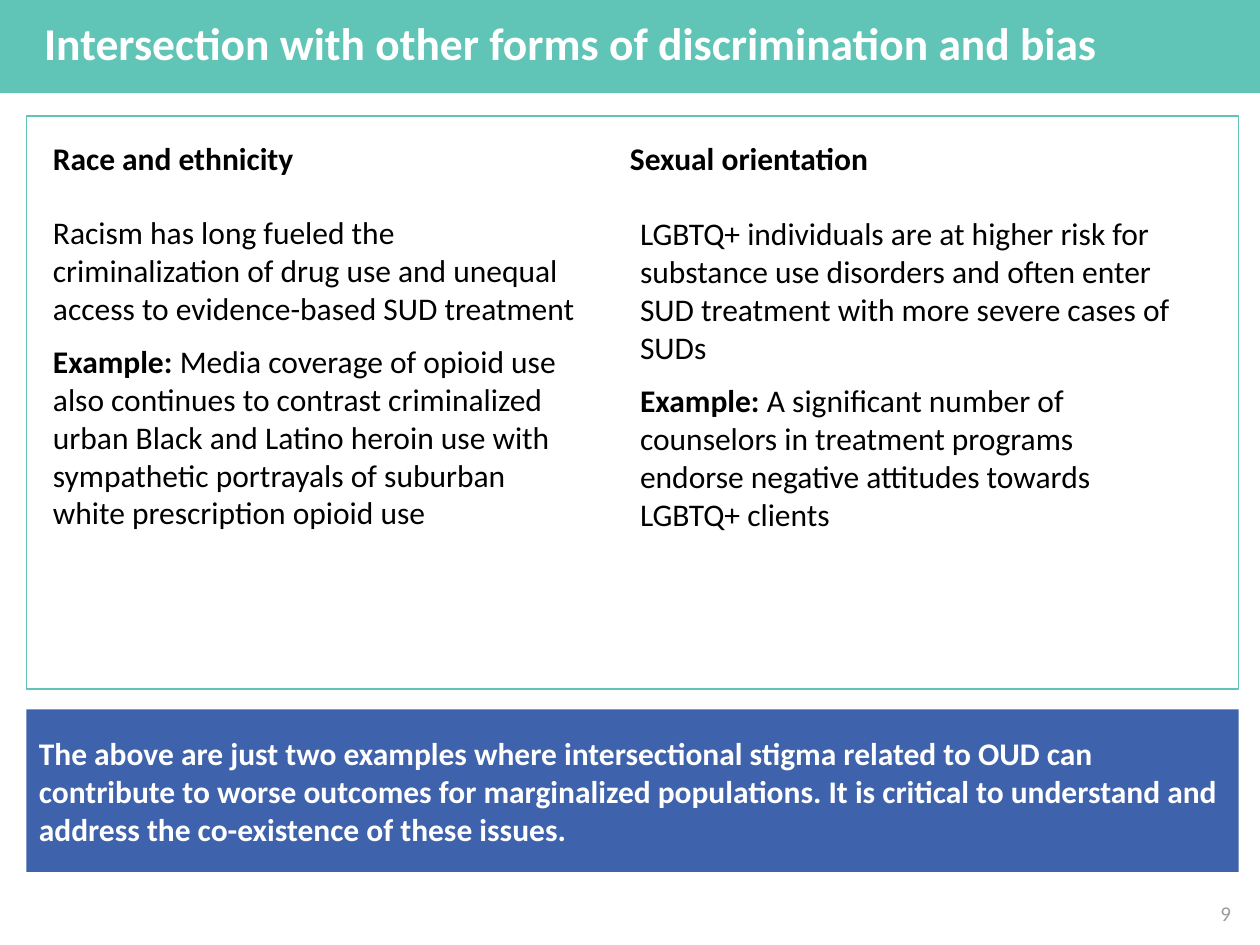
from dataclasses import dataclass

from pptx import Presentation
from pptx.dml.color import RGBColor
from pptx.enum.shapes import MSO_SHAPE
from pptx.enum.text import MSO_ANCHOR, MSO_AUTO_SIZE, PP_ALIGN
from pptx.util import Inches, Pt

RECT = MSO_SHAPE.RECTANGLE
MIDDLE = MSO_ANCHOR.MIDDLE
NO_AUTOFIT = MSO_AUTO_SIZE.NONE
LEFT, RIGHT = PP_ALIGN.LEFT, PP_ALIGN.RIGHT

TEAL = RGBColor(0x60, 0xC5, 0xB7)
BLUE = RGBColor(0x3E, 0x62, 0xAC)
WHITE = RGBColor(0xFF, 0xFF, 0xFF)
BLACK = RGBColor(0, 0, 0)
GRAY = RGBColor(0x9C, 0x9C, 0x9D)
FONT = "Calibri"


@dataclass
class Topic:
    heading: str
    heading_left: float
    body_left: float
    body_top: float
    statement: str
    example: str


TOPICS = [
    Topic("Race and ethnicity", 0.42, 0.42, 1.69,
          "Racism has long fueled the criminalization of drug use and unequal "
          "access to evidence-based SUD treatment",
          "Media coverage of opioid use also continues to contrast criminalized "
          "urban Black and Latino heroin use with sympathetic portrayals of "
          "suburban white prescription opioid use"),
    Topic("Sexual orientation", 5, 5.08, 1.7,
          "LGBTQ+ individuals are at higher risk for substance use disorders and "
          "often enter SUD treatment with more severe cases of SUDs",
          "A significant number of counselors in treatment programs endorse "
          "negative attitudes towards LGBTQ+ clients"),
]


def add_run(p, text: str, color: RGBColor = BLACK, size: float = 18,
            bold: bool = False) -> None:
    r = p.add_run()
    r.text = text
    r.font.name = FONT
    r.font.size = Pt(size)
    r.font.bold = bold
    r.font.color.rgb = color


def add_box(slide, left: float, top: float, width: float, height: float,
            inset_x: float = 0, inset_y: float = 0):
    sp = slide.shapes.add_textbox(Inches(left), Inches(top), Inches(width), Inches(height))
    tf = sp.text_frame
    tf.word_wrap = True
    tf.margin_left = tf.margin_right = Inches(inset_x)
    tf.margin_top = tf.margin_bottom = Inches(inset_y)
    return tf


def add_panel(slide, top: float, height: float):
    sp = slide.shapes.add_shape(RECT, Inches(0.21), Inches(top), Inches(9.62), Inches(height))
    sp.shadow.inherit = False
    return sp


def add_title(slide, text: str) -> None:
    sp = slide.shapes.title
    sp.left, sp.top, sp.width, sp.height = Inches(0), Inches(-0.01), Inches(10), Inches(0.75)
    sp.fill.solid()
    sp.fill.fore_color.rgb = TEAL
    tf = sp.text_frame
    tf.auto_size = NO_AUTOFIT
    tf.vertical_anchor = MIDDLE
    p = tf.paragraphs[0]
    p.alignment = LEFT
    p.line_spacing = 0.9
    pPr = p._p.get_or_add_pPr()
    pPr.set("marL", str(Inches(0.25)))
    pPr.set("indent", "0")
    add_run(p, text, WHITE, 26, True)


def add_summary(slide, text: str) -> None:
    sp = add_panel(slide, 5.63, 1.29)
    sp.fill.solid()
    sp.fill.fore_color.rgb = BLUE
    sp.line.fill.background()
    tf = sp.text_frame
    tf.word_wrap = True
    tf.vertical_anchor = MIDDLE
    p = tf.paragraphs[0]
    p.alignment = LEFT
    add_run(p, text, WHITE, bold=True)


def add_frame(slide) -> None:
    sp = add_panel(slide, 0.92, 4.55)
    sp.fill.background()
    sp.line.color.rgb = TEAL
    sp.line.width = Pt(1)


def add_topic(slide, topic: Topic) -> None:
    heading = add_box(slide, topic.heading_left, 1.1, 3.17, 0.68)
    add_run(heading.paragraphs[0], topic.heading, bold=True)
    body = add_box(slide, topic.body_left, topic.body_top, 4.21, 2.89)
    add_run(body.paragraphs[0], topic.statement)
    p = body.add_paragraph()
    p.space_before = Pt(9)
    add_run(p, "Example: ", bold=True)
    add_run(p, topic.example)


def add_page_number(slide, number: str) -> None:
    tf = add_box(slide, 7.59, 7.1, 2.25, 0.3, 0.07, 0.04)
    tf.vertical_anchor = MIDDLE
    p = tf.paragraphs[0]
    p.alignment = RIGHT
    add_run(p, number, GRAY, 12)


def main() -> None:
    prs = Presentation()
    prs.slide_width, prs.slide_height = Inches(10), Inches(7.5)
    slide = prs.slides.add_slide(prs.slide_layouts[5])
    add_title(slide, "Intersection with other forms of discrimination and bias")
    add_summary(slide, "The above are just two examples where intersectional stigma "
                       "related to OUD can contribute to worse outcomes for marginalized "
                       "populations. It is critical to understand and address the "
                       "co-existence of these issues.")
    add_frame(slide)
    for topic in TOPICS:
        add_topic(slide, topic)
    add_page_number(slide, "9")
    prs.save("out.pptx")


if __name__ == "__main__":
    main()
